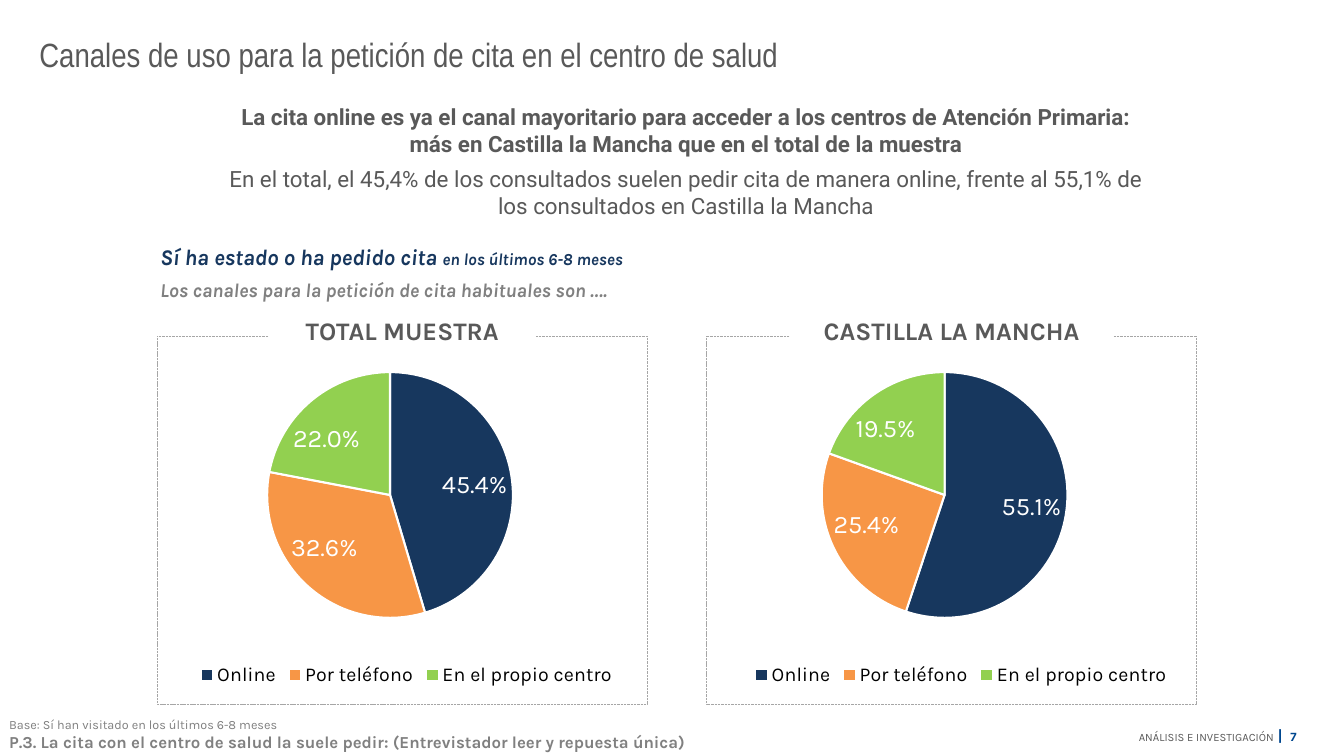
from dataclasses import dataclass

from pptx import Presentation
from pptx.chart.data import CategoryChartData
from pptx.dml.color import RGBColor
from pptx.enum.chart import XL_CHART_TYPE, XL_LABEL_POSITION, XL_LEGEND_POSITION
from pptx.enum.dml import MSO_LINE
from pptx.enum.shapes import MSO_SHAPE
from pptx.enum.text import MSO_ANCHOR, PP_ALIGN
from pptx.oxml import parse_xml
from pptx.oxml.ns import nsdecls
from pptx.util import Inches, Pt

PIE = XL_CHART_TYPE.PIE
BEST = XL_LABEL_POSITION.BEST_FIT
BELOW = XL_LEGEND_POSITION.BOTTOM
DASH = MSO_LINE.SQUARE_DOT
RECT = MSO_SHAPE.RECTANGLE
TOP, MID, LOW = MSO_ANCHOR.TOP, MSO_ANCHOR.MIDDLE, MSO_ANCHOR.BOTTOM
LEFT, MIDDLE, RIGHT = PP_ALIGN.LEFT, PP_ALIGN.CENTER, PP_ALIGN.RIGHT


@dataclass(frozen=True)
class Theme:
    text: str = "595959"
    gray: str = "808080"
    rule: str = "A6A6A6"
    white: str = "FFFFFF"
    black: str = "000000"
    navy: str = "17375E"
    blue: str = "00478F"
    slices: tuple = ("17375E", "F79646", "92D050")
    head: str = "Arial Narrow"
    body: str = "Karla"
    lead: str = "Roboto"
    title: int = 24
    large: int = 18
    main: int = 16
    mid: int = 14
    small: int = 12
    bar: int = 11
    note: int = 9
    foot: int = 8


T = Theme()
WIDE, HIGH = Inches(13.333), Inches(7.5)
CATS = ("Online", "Por teléfono", "En el propio centro")

# Panels: heading, heading width, chart shift from the frame, values
PANELS = (
    ("TOTAL MUESTRA", 19.88, 1.8, (45.4, 32.6, 22.0)),
    ("CASTILLA LA MANCHA", 24.08, 2.18, (55.1, 25.4, 19.5)),
)


def place(x, y, w, h):
    """Turn percent shares of the slide into lengths."""
    return [round(v * s / 100) for v, s in zip((x, y, w, h), (WIDE, HIGH) * 2)]


def style(font, size, color, name=T.body, bold=None, slant=None):
    font.size, font.name = Pt(size), name
    font.bold, font.italic = bold, slant
    font.color.rgb = RGBColor.from_string(color)


def add_box(slide, box, fill=None):
    shape = slide.shapes.add_shape(RECT, *place(*box))
    shape.shadow.inherit = False
    shape.line.fill.background()
    if fill:
        shape.fill.solid()
        shape.fill.fore_color.rgb = RGBColor.from_string(fill)
    else:
        shape.fill.background()
    return shape


def write(frame, lines, align=LEFT, anchor=MID, after=0, wrap=True):
    """Write lines, each a list of (text, style) runs."""
    frame.word_wrap, frame.vertical_anchor = wrap, anchor
    for i, runs in enumerate(lines):
        par = frame.paragraphs[0] if i == 0 else frame.add_paragraph()
        par.alignment, par.space_after = align, Pt(after)
        for text, look in runs:
            run = par.add_run()
            run.text = text
            style(par.font if len(runs) == 1 else run.font, **look)


def add_title(slide, box):
    title = slide.shapes.title
    title.left, title.top, title.width, title.height = place(*box)
    look = dict(size=T.title, color=T.text, name=T.head)
    text = "Canales de uso para la petición de cita en el centro de salud"
    write(title.text_frame, [[(text, look)]], anchor=TOP)
    # Thin outline around the letters
    run = title.text_frame.paragraphs[0].runs[0]
    style(run.font, **look)
    run.font._element.insert(0, parse_xml(
        f'<a:ln {nsdecls("a")} w="9525"><a:solidFill>'
        f'<a:srgbClr val="{T.text}"/></a:solidFill></a:ln>'))


def add_summary(slide, box):
    look = dict(size=T.main, color=T.text, name=T.lead)
    write(add_box(slide, box, T.white).text_frame, [
        [("La cita online es ya el canal mayoritario para acceder a los centros de "
          "Atención Primaria: más en Castilla la Mancha que en el total de la muestra",
          dict(look, bold=True))],
        [("En el total, el 45,4% de los consultados suelen pedir cita de manera online, "
          "frente al 55,1% de los consultados en Castilla la Mancha", look)],
    ], align=MIDDLE, after=6)


def add_intro(slide, box):
    look = dict(color=T.navy, bold=True, slant=True)
    write(add_box(slide, box, T.white).text_frame, [
        [("Sí ha estado o ha pedido cita ", dict(look, size=T.main)),
         ("en los últimos 6-8 meses", dict(look, size=T.small))],
        [("Los canales para la petición de cita habituales son ….",
          dict(look, size=T.mid, color=T.gray))],
    ], anchor=TOP, after=6)


def pin(part, index, box, inner=False):
    """Fix a chart part at shares of the chart's size."""
    for old in part.findall("{*}layout"):
        part.remove(old)
    target = [("layoutTarget", "inner")] if inner else []
    rows = target + [("xMode", "edge"), ("yMode", "edge"), *zip("xywh", box)]
    spots = "".join(f'<c:{k} val="{v}"/>' for k, v in rows)
    part.insert(index, parse_xml(
        f'<c:layout {nsdecls("c")}><c:manualLayout>{spots}</c:manualLayout></c:layout>'))


def add_pie(slide, box, vals):
    data = CategoryChartData(number_format="0.0")
    data.categories = CATS
    data.add_series("Series 1", vals)
    chart = slide.shapes.add_chart(PIE, *place(*box), data).chart
    chart.has_title = False
    style(chart.font, T.mid, T.black)
    chart.has_legend = True
    chart.legend.position = BELOW
    chart.legend.include_in_layout = False
    style(chart.legend.font, T.mid, T.black)

    plot = chart.plots[0]
    plot.vary_by_categories = True
    for i, color in enumerate(T.slices):
        form = plot.series[0].points[i].format
        form.fill.solid()
        form.fill.fore_color.rgb = RGBColor.from_string(color)
        form.line.color.rgb = RGBColor.from_string(T.white)
        form.line.width = Pt(1.5)
    plot.has_data_labels = True
    labels = plot.data_labels
    labels.show_value, labels.show_percentage = True, False
    labels.number_format, labels.number_format_is_linked = r"0.0\%", False
    labels.position = BEST
    style(labels.font, T.large, T.white)

    # Fixed plot area, and a legend wide enough for one row
    pin(chart._chartSpace.chart.plotArea, 0, (0.196, 0.089, 0.562, 0.667), True)
    pin(chart.legend._element, 1, (0.03, 0.83, 0.97, 0.08))


def add_panel(slide, box, name, span, shift, vals):
    x, y, w, h = box
    # Dashed frame
    line = add_box(slide, box).line
    line.color.rgb = RGBColor.from_string(T.rule)
    line.width, line.dash_style = Pt(0.25), DASH
    # Heading centred over the top edge
    head = add_box(slide, (x + (w - span) / 2, y - 4.3, span, 7.07), T.white)
    look = dict(size=T.large, color=T.text, bold=True)
    write(head.text_frame, [[(name, look)]], align=MIDDLE, after=6)
    add_pie(slide, (x + shift, y - 1.45, 32.55, 53.2), vals)


def add_base(slide, box):
    frame = slide.shapes.add_textbox(*place(*box)).text_frame
    frame.margin_left = frame.margin_right = Inches(0.09)
    frame.margin_top = frame.margin_bottom = Inches(0.04)
    write(frame, [
        [("Base: Sí han visitado en los últimos 6-8 meses",
          dict(size=T.note, color=T.gray))],
        [("P.3. La cita con el centro de salud la suele pedir: "
          "(Entrevistador leer y repuesta única)",
          dict(size=T.small, color=T.gray, bold=True))],
    ], anchor=LOW)


def add_footer(slide, box):
    frame = slide.shapes.add_textbox(*place(*box)).text_frame
    mark = dict(color=T.blue, bold=True)
    write(frame, [[
        ("ANÁLISIS E INVESTIGACIÓN", dict(size=T.foot, color=T.text)),
        (" ", dict(size=T.bar, color=T.text)),
        ("|  ", dict(mark, size=T.bar)),
        ("7", dict(mark, size=T.note)),
    ]], align=RIGHT, wrap=False)


def main():
    deck = Presentation()
    deck.slide_width, deck.slide_height = WIDE, HIGH
    slide = deck.slides.add_slide(deck.slide_layouts[5])
    add_title(slide, (2.18, 3.87, 79.8, 6.67))
    add_summary(slide, (15.45, 13.07, 71.18, 16.53))
    add_intro(slide, (11.18, 31.47, 56.55, 9.2))
    for i, panel in enumerate(PANELS):
        add_panel(slide, (11.7 + i * 40.88, 44.45, 36.45, 48.67), *panel)
    add_base(slide, (0, 94.13, 68.93, 5.87))
    add_footer(slide, (82.88, 95.33, 14.33, 3.87))
    deck.save("out.pptx")


if __name__ == "__main__":
    main()
